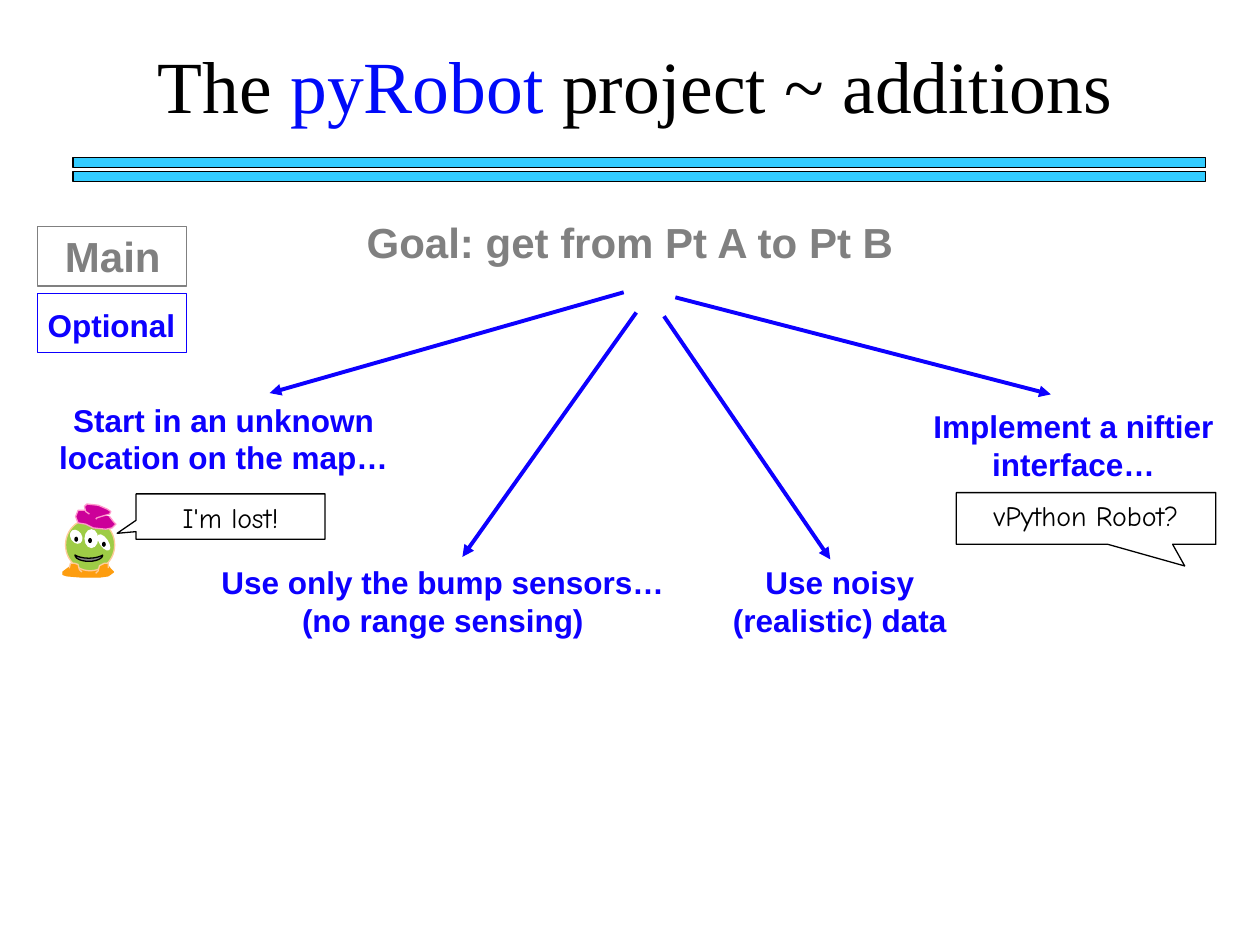
from lxml import etree
from pptx import Presentation
from pptx.dml.color import RGBColor
from pptx.enum.shapes import MSO_CONNECTOR, MSO_SHAPE
from pptx.enum.text import MSO_ANCHOR, PP_ALIGN
from pptx.oxml.ns import qn
from pptx.util import Inches, Pt

STRAIGHT = MSO_CONNECTOR.STRAIGHT
RECTANGLE, ELLIPSE, MOON = MSO_SHAPE.RECTANGLE, MSO_SHAPE.OVAL, MSO_SHAPE.MOON
CALLOUT = MSO_SHAPE.RECTANGULAR_CALLOUT
CENTER, TOP = PP_ALIGN.CENTER, MSO_ANCHOR.TOP

BLACK = RGBColor(0x00, 0x00, 0x00)
WHITE = RGBColor(0xFF, 0xFF, 0xFF)
GRAY = RGBColor(0x80, 0x80, 0x80)
BLUE = RGBColor(0x0D, 0x00, 0xFF)
TITLE_BLUE = RGBColor(0x00, 0x0A, 0xF9)
CYAN = RGBColor(0x33, 0xCC, 0xFF)
ORANGE = RGBColor(0xFD, 0x9D, 0x0F)
GREEN = RGBColor(0x9E, 0xCC, 0x46)
PEACH = RGBColor(0xFF, 0xCC, 0x99)
MAGENTA = RGBColor(0xCC, 0x00, 0x99)
PINK = RGBColor(0xFF, 0x99, 0xCC)

presentation = Presentation()
presentation.slide_width, presentation.slide_height = Inches(10), Inches(7.5)
slide = presentation.slides.add_slide(presentation.slide_layouts[6])

# The slide is a grid of 10 columns and 7.5 rows, all cells square
CELL = presentation.slide_width / 10


def add_shape(shapes, kind, grid_box, fill=None, line=None, rotation=0):
    """Add a preset shape, or a freeform from points in 1/100 cell if kind is None."""
    if kind is None:
        builder = shapes.build_freeform(*grid_box[0], scale=CELL / 100)
        builder.add_line_segments(grid_box[1:], close=False)
        shape = builder.convert_to_shape()
    else:
        shape = shapes.add_shape(kind, *[round(length * CELL) for length in grid_box])
    shape.shadow.inherit = False
    shape.rotation = rotation
    if fill is None:
        shape.fill.background()
    else:
        shape.fill.solid()
        shape.fill.fore_color.rgb = fill
    if line is None:
        shape.line.fill.background()
    else:
        shape.line.color.rgb = line
        shape.line.width = Pt(0.75)
    return shape


def write_text(shape, *runs, size=18, font="Arial", color=BLUE, bold=True):
    """Write centred runs; a run is a string, or a (string, colour) pair."""
    frame = shape.text_frame
    frame.word_wrap = True
    frame.vertical_anchor = TOP
    paragraph = frame.paragraphs[0]
    paragraph.alignment = CENTER
    for item in runs:
        text, run_color = (item, color) if isinstance(item, str) else item
        run = paragraph.add_run()
        run.text = text
        run.font.size, run.font.name, run.font.bold = Pt(size), font, bold
        run.font.color.rgb = run_color


# Double rule under the title
for top in (1.25, 1.36):
    add_shape(slide.shapes, RECTANGLE, (0.58, top, 8.99, 0.08), CYAN, BLACK)

# Little three-eyed alien
feet = [(70, 444), (76, 444), (85, 448), (88, 452), (90, 454), (86, 457), (79, 458),
        (65, 458), (53, 457), (50, 456), (50, 454), (54, 451), (58, 448), (61, 446),
        (65, 444), (69, 445), (70, 444)]
hat_brim = [(70, 405), (62, 405), (60, 410), (62, 415), (68, 416), (74, 419),
            (84, 420), (89, 419), (92, 416), (90, 414), (87, 410)]
hat_top = [(71, 408), (68, 406), (67, 402), (69, 400), (78, 401), (85, 404),
           (88, 406), (87, 408), (80, 410), (77, 411), (76, 412)]
left_hand = [(55, 451), (56, 447), (59, 447), (62, 448), (63, 452), (65, 454)]
right_hand = [(86, 451), (86, 447), (83, 447), (79, 449), (78, 453), (76, 455)]
alien_parts = [
    (None, feet, ORANGE, ORANGE),
    (ELLIPSE, (0.52, 4.12, 0.39, 0.41), GREEN, PEACH),
    (ELLIPSE, (0.56, 4.2, 0.09, 0.12), WHITE, None, 327.2),
    (ELLIPSE, (0.67, 4.2, 0.11, 0.15), WHITE),
    (ELLIPSE, (0.79, 4.23, 0.07, 0.15), WHITE, None, 325.5),
    (ELLIPSE, (0.59, 4.26, 0.03, 0.04), BLACK),
    (ELLIPSE, (0.7, 4.27, 0.03, 0.04), BLACK),
    (ELLIPSE, (0.81, 4.3, 0.03, 0.04), BLACK),
    (MOON, (0.68, 4.32, 0.05, 0.22), GRAY, BLACK, 270),
    (None, hat_brim, MAGENTA, PINK),
    (None, hat_top, MAGENTA, PINK),
    (None, left_hand, ORANGE, PEACH),
    (None, right_hand, ORANGE, PEACH),
]
alien = slide.shapes.add_group_shape()
for part in alien_parts:
    add_shape(alien.shapes, *part)

# Title, goal, labels and ideas
heading = {"size": 24, "color": GRAY}
texts = [
    ((0.5, 0.27, 9.08, 0.8), ["The ", ("pyRobot", TITLE_BLUE), " project ~ additions"],
     {"size": 42, "font": "Times New Roman", "color": BLACK, "bold": False}),
    ((2.75, 1.67, 4.5, 0.5), ["Goal: get from Pt A to Pt B"], heading),
    ((0.27, 1.78, 1.25, 0.5), ["Main"], heading),
    ((0.25, 2.38, 1.27, 0.4), ["Optional"], {}),
    ((0.29, 3.13, 2.97, 0.7), ["Start in an unknown location on the map…"], {}),
    ((1.61, 4.42, 3.81, 0.7), ["Use only the bump sensors… (no range sensing)"], {}),
    ((5.58, 4.42, 2.17, 0.7), ["Use noisy (realistic) data"], {}),
    ((7.31, 3.18, 2.42, 0.7), ["Implement a niftier interface…"], {}),
]
for grid_box, runs, text_format in texts:
    text_box = slide.shapes.add_textbox(*[round(length * CELL) for length in grid_box])
    write_text(text_box, *runs, **text_format)

# Frames of the two labels
for top, color in ((1.8, GRAY), (2.33, BLUE)):
    add_shape(slide.shapes, RECTANGLE, (0.3, top, 1.18, 0.47), line=color)

# Arrows from the goal to the ideas
arrows = [(4.95, 2.32, 2.14, 3.12), (5.05, 2.48, 3.67, 4.42),
          (5.27, 2.51, 6.59, 4.44), (5.36, 2.36, 8.34, 3.13)]
for ends in arrows:
    arrow = slide.shapes.add_connector(STRAIGHT, *[round(end * CELL) for end in ends])
    arrow.line.color.rgb = BLUE
    arrow.line.width = Pt(2.25)
    etree.SubElement(arrow.line._get_or_add_ln(), qn("a:tailEnd"), type="triangle")
    etree.SubElement(arrow._element.spPr, qn("a:effectLst"))

# Speech bubbles
bubbles = [
    ("I'm lost!", (1.08, 3.92, 1.5, 0.36), (-0.6, 0.37)),
    ("vPython Robot?", (7.59, 3.91, 2.06, 0.41), (0.38, 0.92)),
]
for text, grid_box, tip in bubbles:
    bubble = add_shape(slide.shapes, CALLOUT, grid_box, WHITE, BLACK)
    bubble.adjustments[0], bubble.adjustments[1] = tip
    write_text(bubble, text, size=16, font="Comic Neue", color=BLACK, bold=False)

presentation.save("out.pptx")
